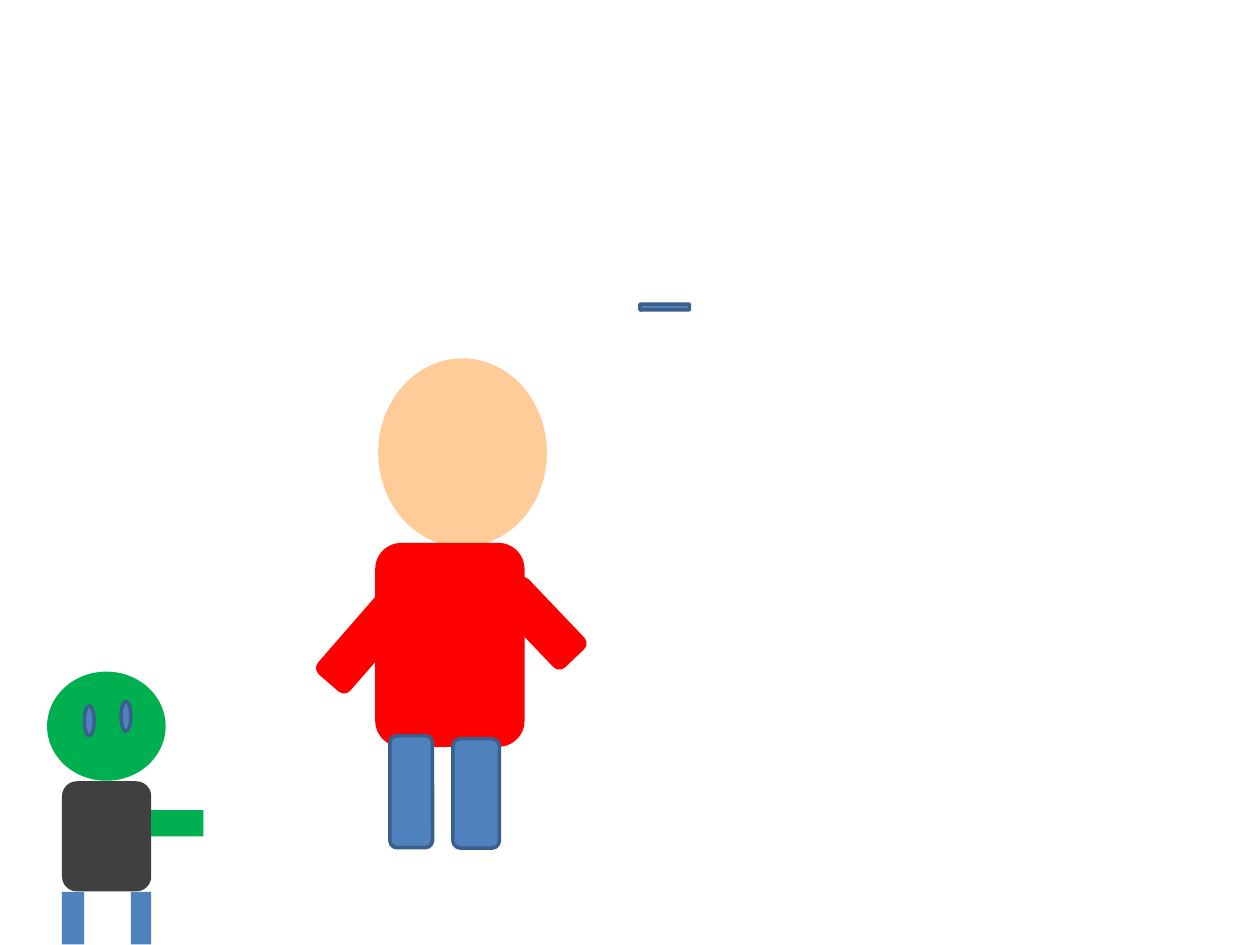
"""Build a slide with two simple figures and a floating bar."""
from pptx import Presentation
from pptx import util as u
from pptx.dml.color import RGBColor
from pptx.enum import shapes

THEME = {
    "skin": "FFCC99", "red": "FF0000", "blue": "4F81BD", "outline": "3A5F8C",
    "green": "00B050", "charcoal": "404040", "line_width": 2,
}
SLIDE_SIZE = (25.4, 19.05)
OVAL = shapes.MSO_SHAPE.OVAL
ROUNDED = shapes.MSO_SHAPE.ROUNDED_RECTANGLE
RECTANGLE = shapes.MSO_SHAPE.RECTANGLE

PARTS = {
    "person head": (OVAL, (7.66, 7.26, 3.33, 3.73), 0, "skin", "skin"),
    "person shirt": (ROUNDED, (7.6, 10.98, 2.94, 4.04), 0, "red", "red"),
    "person left arm": (ROUNDED, (6.92, 11.96, 0.79, 2.03), 41, "red", "red"),
    "person right arm": (ROUNDED, (9.97, 12.17, 1.88, 0.79), 226.4, "red", "red"),
    "person left leg": (ROUNDED, (7.86, 14.83, 0.86, 2.26), 0, "blue", "outline"),
    "person right leg": (ROUNDED, (9.13, 14.89, 0.94, 2.21), 0, "blue", "outline"),
    "creature head": (OVAL, (0.95, 13.54, 2.39, 2.2), 0, "green", None),
    "creature body": (ROUNDED, (1.25, 15.75, 1.8, 2.22), 0, "charcoal", None),
    "creature left leg": (RECTANGLE, (1.25, 17.98, 0.45, 1.06), 0, "blue", None),
    "creature right leg": (RECTANGLE, (2.64, 17.98, 0.41, 1.06), 0, "blue", None),
    "creature arm": (RECTANGLE, (3.05, 16.33, 1.05, 0.53), 0, "green", None),
    "creature left eye": (OVAL, (1.7, 14.23, 0.2, 0.6), 0, "blue", "outline"),
    "floating bar": (ROUNDED, (12.9, 6.13, 1, 0.12), 0, "blue", "outline"),
    "creature right eye": (OVAL, (2.44, 14.14, 0.2, 0.6), 0, "blue", "outline"),
}


def add_part(slide, preset, box, rotation, fill, line):
    shape = slide.shapes.add_shape(preset, *map(u.Cm, box))
    shape.rotation = rotation
    shape.shadow.inherit = False
    shape.fill.solid()
    shape.fill.fore_color.rgb = RGBColor.from_string(THEME[fill])
    if line:
        shape.line.color.rgb = RGBColor.from_string(THEME[line])
        shape.line.width = u.Pt(THEME["line_width"])
    else:
        shape.line.fill.background()


def main():
    presentation = Presentation()
    presentation.slide_width, presentation.slide_height = map(u.Cm, SLIDE_SIZE)
    slide = presentation.slides.add_slide(presentation.slide_layouts[6])
    for part in PARTS.values():
        add_part(slide, *part)
    presentation.save("out.pptx")


if __name__ == "__main__":
    main()
